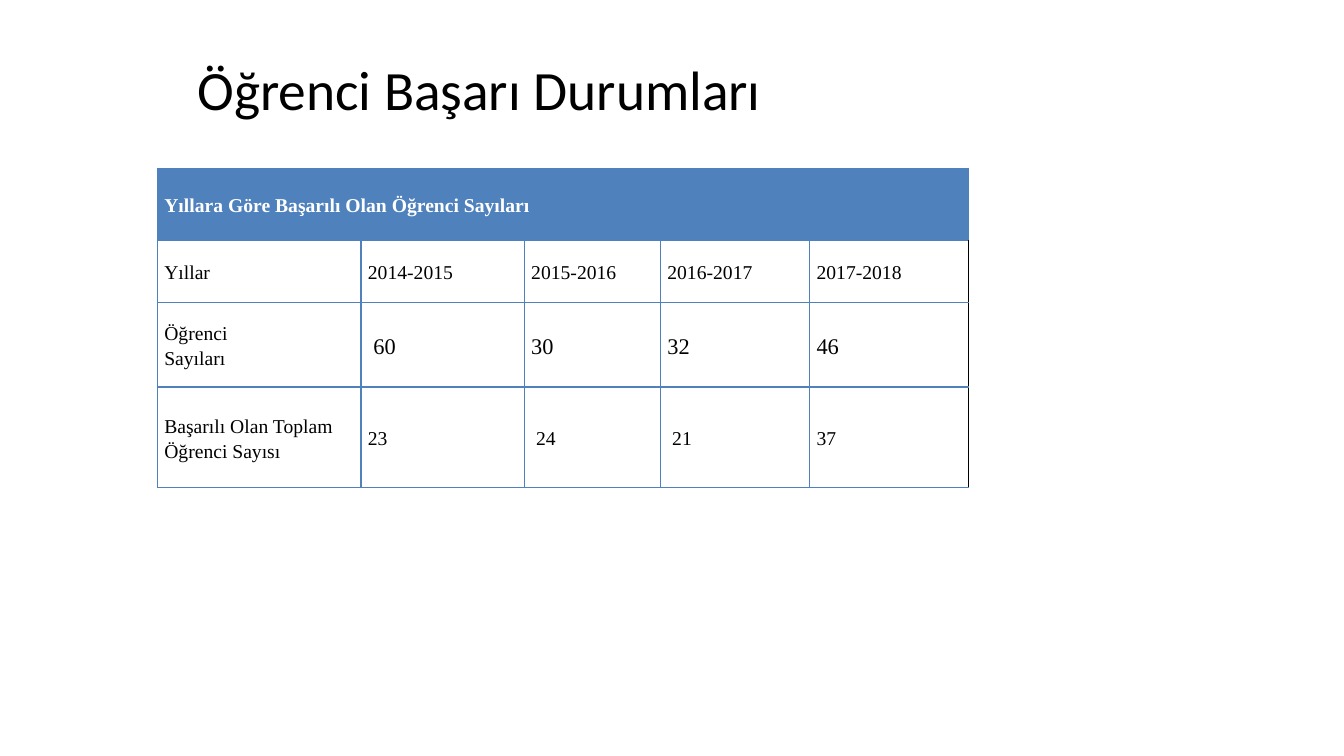
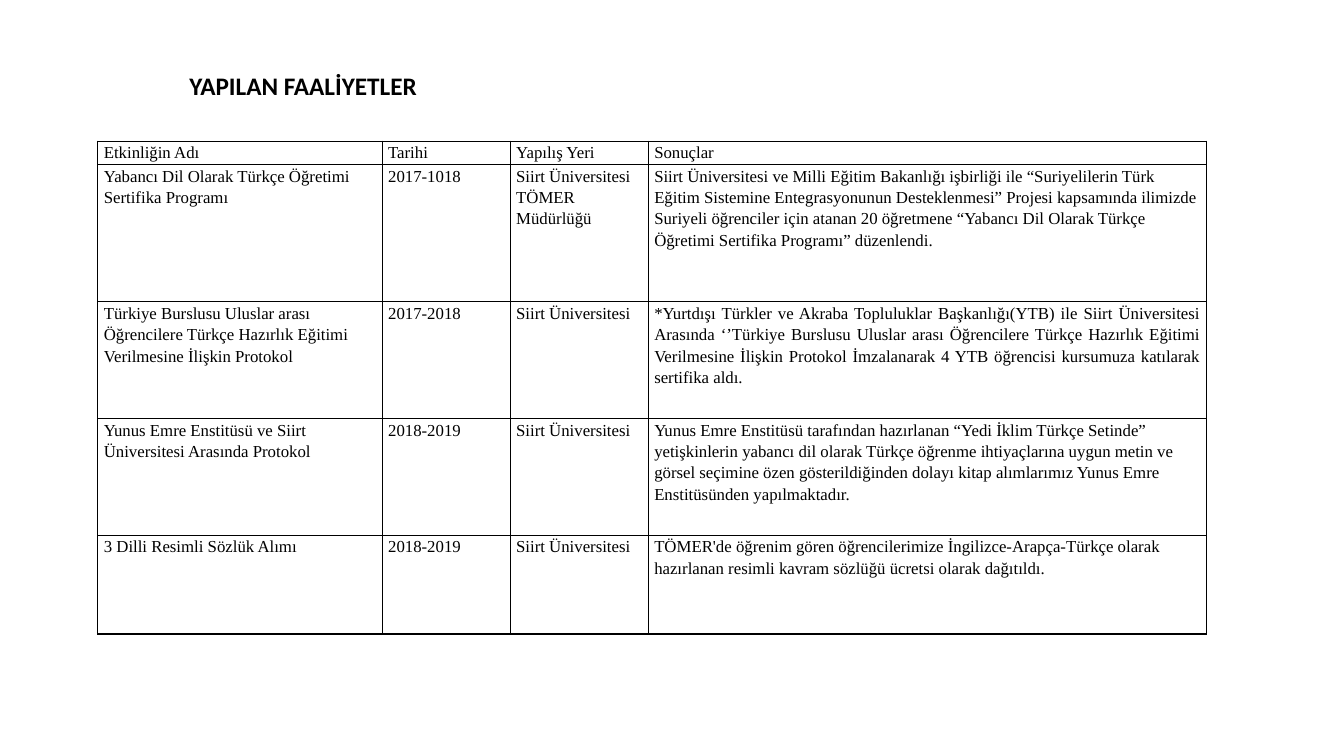
from dataclasses import dataclass

from lxml.etree import SubElement
from pptx import Presentation
from pptx.dml.color import RGBColor
from pptx.enum.text import MSO_ANCHOR, PP_ALIGN
from pptx.oxml.ns import qn
from pptx.util import Inches, Pt


@dataclass(frozen=True)
class Theme:
    ink: str = "000000"
    paper: str = "FFFFFF"
    accent: str = "4F81BD"
    title_font: str = "Calibri"
    body_font: str = "Times New Roman"
    title_size: float = 39.6
    subtitle_size: float = 18
    figure_size: float = 16
    table_size: float = 14
    small_size: float = 12
    line: float = 1
    thick_line: float = 2.25


THEME = Theme()


def write(tf, text, *, font, size, color=THEME.ink, bold=False,
          align=PP_ALIGN.LEFT, spacing=1.0):
    """Fill a text frame, one paragraph per line of text."""
    for i, line in enumerate(text.split("\n")):
        p = tf.add_paragraph() if i else tf.paragraphs[0]
        p.alignment = align
        p.line_spacing = spacing
        r = p.add_run()
        r.text = line
        r.font.name = font
        r.font.size = Pt(size)
        r.font.bold = bold
        r.font.color.rgb = RGBColor.from_string(color)


def set_borders(cell, borders):
    """Draw the four edges; borders maps L, R, T, B to (colour, points)."""
    tcPr = cell._tc.get_or_add_tcPr()
    for i, side in enumerate("LRTB"):
        color, width = borders[side]
        ln = SubElement(tcPr, qn(f"a:ln{side}"), w=str(Pt(width)))
        fill = SubElement(ln, qn("a:solidFill"))
        SubElement(fill, qn("a:srgbClr"), val=color)
        tcPr.insert(i, ln)


class Deck:
    def __init__(self, theme):
        self.theme = theme
        self.prs = Presentation()
        self.prs.slide_width = Inches(13.33)
        self.prs.slide_height = Inches(7.5)
        self.s = None

    def slide(self):
        self.s = self.prs.slides.add_slide(self.prs.slide_layouts[6])

    def title(self, text, x, y, w, h, anchor=MSO_ANCHOR.MIDDLE, **fmt):
        sp = self.s.shapes.add_textbox(Inches(x), Inches(y), Inches(w), Inches(h))
        tf = sp.text_frame
        tf.word_wrap = True
        tf.vertical_anchor = anchor
        write(tf, text, font=self.theme.title_font, spacing=0.9, **fmt)

    def table(self, rows, x, y, widths, heights, *, size, margin,
              anchor=MSO_ANCHOR.TOP, banner=False, borders, formats=None):
        """Add a table; formats maps (row, column) to extra text format."""
        formats = formats or {}
        frame = self.s.shapes.add_table(
            len(heights), len(widths), Inches(x), Inches(y),
            Inches(sum(widths)), Inches(sum(heights)))
        table = frame.table
        table.first_row = table.horz_banding = False
        for column, width in zip(table.columns, widths):
            column.width = Inches(width)
        for row, height in zip(table.rows, heights):
            row.height = Inches(height)
        if banner:
            table.cell(0, 0).merge(table.cell(0, len(widths) - 1))

        for i, row in enumerate(table.rows):
            for j, cell in enumerate(row.cells):
                cell.margin_left = cell.margin_right = Inches(margin)
                cell.margin_top = cell.margin_bottom = 0
                cell.vertical_anchor = anchor
                if banner and i == 0:
                    cell.fill.solid()
                    cell.fill.fore_color.rgb = RGBColor.from_string(self.theme.accent)
                else:
                    cell.fill.background()
                set_borders(cell, borders(i, j))
                if not cell.is_spanned:
                    fmt = {"size": size, **formats.get((i, j), {})}
                    write(cell.text_frame, rows[i][j], font=self.theme.body_font,
                          spacing=1.15, **fmt)


def results_borders(i, j):
    """Blue grid, black right edge, thick rule above the last row."""
    thin = (THEME.accent, THEME.line)
    thick = (THEME.accent, THEME.thick_line)
    return {"L": thin,
            "R": (THEME.ink, THEME.line) if i and j == 4 else thin,
            "T": thick if i == 3 else thin,
            "B": thick if i == 2 else thin}


def activity_borders(i, j):
    return dict.fromkeys("LRTB", (THEME.ink, THEME.line))


RESULTS = [
    ["Yıllara Göre Başarılı Olan Öğrenci Sayıları"],
    ["Yıllar", "2014-2015", "2015-2016", "2016-2017", "2017-2018"],
    ["Öğrenci\nSayıları", " 60", "30", "32", "46"],
    ["Başarılı Olan Toplam Öğrenci Sayısı", "23", " 24", " 21", "37"],
]

ACTIVITIES = [
    ["Etkinliğin Adı", "Tarihi", "Yapılış Yeri", "Sonuçlar"],
    ["Yabancı Dil Olarak Türkçe Öğretimi Sertifika Programı", "2017-1018",
     "Siirt Üniversitesi TÖMER Müdürlüğü",
     "Siirt Üniversitesi ve Milli Eğitim Bakanlığı işbirliği ile “Suriyelilerin "
     "Türk Eğitim Sistemine Entegrasyonunun Desteklenmesi” Projesi kapsamında "
     "ilimizde Suriyeli öğrenciler için atanan 20 öğretmene “Yabancı Dil Olarak "
     "Türkçe Öğretimi Sertifika Programı” düzenlendi."],
    ["Türkiye Burslusu Uluslar arası Öğrencilere Türkçe Hazırlık Eğitimi "
     "Verilmesine İlişkin Protokol", "2017-2018", "Siirt Üniversitesi",
     "*Yurtdışı Türkler ve Akraba Topluluklar Başkanlığı(YTB) ile Siirt "
     "Üniversitesi Arasında ‘’Türkiye Burslusu Uluslar arası Öğrencilere Türkçe "
     "Hazırlık Eğitimi Verilmesine İlişkin Protokol İmzalanarak 4 YTB öğrencisi "
     "kursumuza katılarak sertifika aldı."],
    ["Yunus Emre Enstitüsü ve Siirt Üniversitesi Arasında Protokol", "2018-2019",
     "Siirt Üniversitesi",
     "Yunus Emre Enstitüsü tarafından hazırlanan “Yedi İklim Türkçe Setinde” "
     "yetişkinlerin yabancı dil olarak Türkçe öğrenme ihtiyaçlarına uygun metin "
     "ve görsel seçimine özen gösterildiğinden dolayı kitap alımlarımız Yunus "
     "Emre Enstitüsünden yapılmaktadır."],
    ["3 Dilli Resimli Sözlük Alımı", "2018-2019", "Siirt Üniversitesi",
     "TÖMER'de öğrenim gören öğrencilerimize İngilizce-Arapça-Türkçe olarak "
     "hazırlanan resimli kavram sözlüğü ücretsi olarak dağıtıldı."],
]


def main():
    deck = Deck(THEME)

    # Student results
    deck.slide()
    deck.title("Öğrenci Başarı Durumları", 1.86, 0.65, 8, 0.53,
               size=THEME.title_size)
    formats = {(2, j): {"size": THEME.figure_size} for j in range(1, 5)}
    formats[0, 0] = {"color": THEME.paper, "bold": True}
    deck.table(RESULTS, 1.56, 1.67, [2.02, 1.62, 1.35, 1.48, 1.58],
               [0.72, 0.61, 0.84, 1], size=THEME.table_size, margin=0.07,
               anchor=MSO_ANCHOR.MIDDLE, banner=True, borders=results_borders,
               formats=formats)

    # Activities
    deck.slide()
    deck.title("YAPILAN FAALİYETLER", 1.78, 0.68, 10.63, 0.71,
               anchor=MSO_ANCHOR.TOP, size=THEME.subtitle_size, bold=True)
    deck.table(ACTIVITIES, 0.97, 1.4, [2.82, 1.27, 1.37, 5.54],
               [0.22, 1.36, 1.16, 1.16, 0.98], size=THEME.small_size,
               margin=0.06, borders=activity_borders,
               formats={(2, 3): {"align": PP_ALIGN.JUSTIFY}})

    deck.prs.save("out.pptx")


if __name__ == "__main__":
    main()
